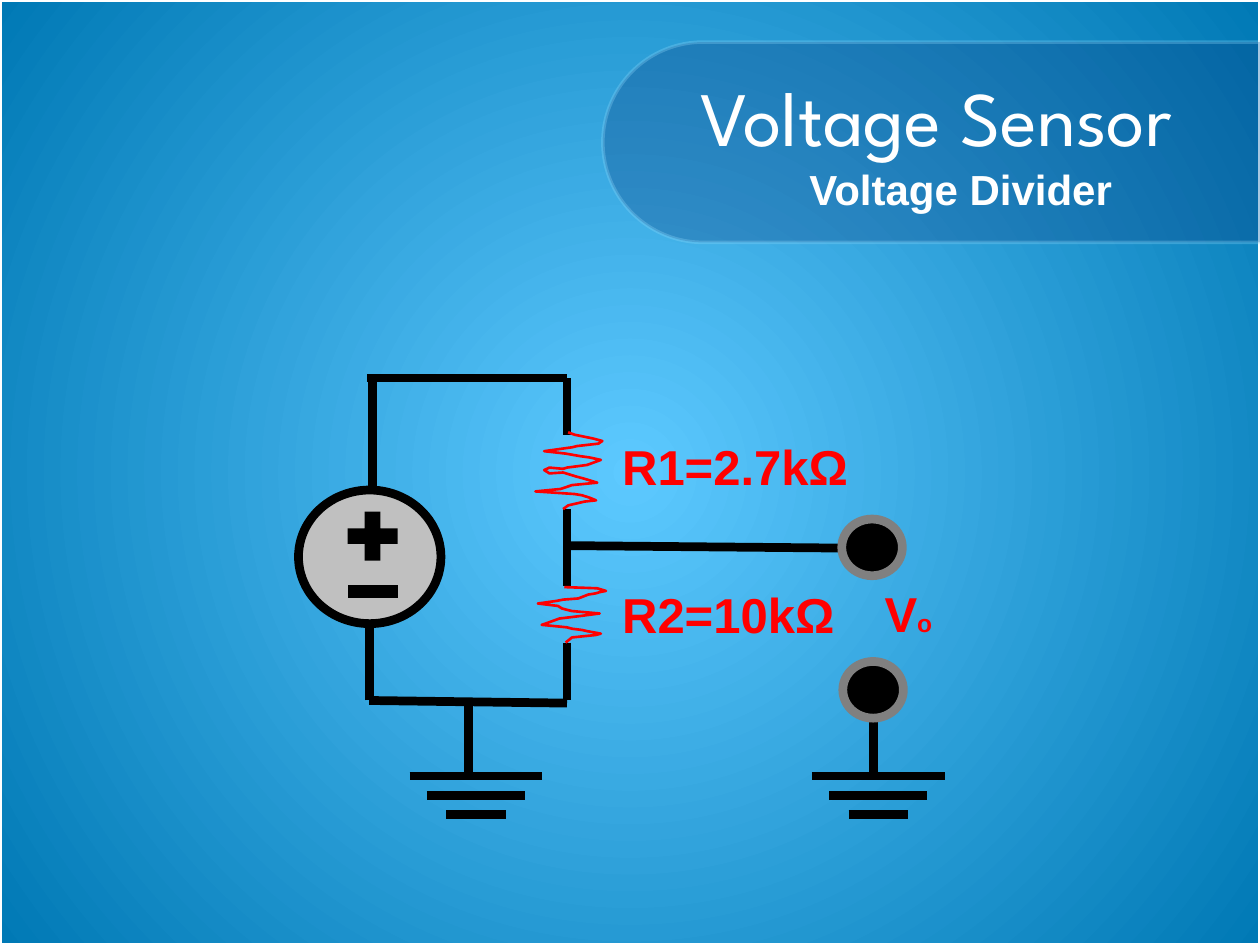
from lxml.etree import SubElement
from pptx import Presentation
from pptx.dml.color import RGBColor
from pptx.enum.shapes import MSO_CONNECTOR, MSO_SHAPE
from pptx.enum.text import MSO_ANCHOR, MSO_AUTO_SIZE, PP_ALIGN
from pptx.oxml.ns import qn
from pptx.util import Pt

# Resistor squiggles, relative to the top left of each one
R1_POINTS = [
    (18.7, 0), (22.3, 1.4), (33.1, 3.6), (38.2, 5), (36, 6.5), (23.8, 7.9),
    (20.9, 8.6), (5, 10.8), (17.3, 12.2), (25.9, 13.7), (31, 14.4),
    (37.4, 15.8), (29.5, 18.7), (18, 20.2), (15.8, 20.9), (8, 20.2),
    (5, 21.6), (8, 23.5), (15.8, 23), (23, 25.2), (28.1, 26.6), (35.3, 28.8),
    (20.9, 30.2), (14.4, 32.4), (0, 33.8), (22.3, 35.3), (26.6, 36),
    (31, 37.4), (34.6, 38.9), (28.1, 39.6), (18.7, 41.8), (15.8, 43.9)]
R2_POINTS = [
    (15.8, 0), (34.6, 0.7), (39.6, 2.2), (36, 2.9), (33.8, 3.6), (29.5, 4.3),
    (23.8, 6.5), (15.1, 7.2), (11.5, 7.9), (0.7, 9.4), (12.2, 10.8),
    (14.4, 12.2), (17.3, 13), (20.2, 13.7), (36, 15.1), (24.5, 16.6),
    (18.7, 17.3), (13, 18), (5, 20.9), (2.9, 21.6), (17.3, 23), (20.2, 23.8),
    (25.9, 24.5), (28.8, 25.2), (36.7, 26.6), (33.8, 27.4), (20.2, 28.8),
    (16.6, 31.7)]


def rgb(color):
    return RGBColor.from_string(color)


def style(sp, fill=None, line=None, width=5):
    sp.shadow.inherit = False
    if fill:
        sp.fill.solid()
        sp.fill.fore_color.rgb = rgb(fill)
    else:
        sp.fill.background()
    if line:
        sp.line.color.rgb = rgb(line)
        sp.line.width = Pt(width)
    else:
        sp.line.fill.background()


def add_shape(shapes, kind, x, y, w, h, **fmt):
    sp = shapes.add_shape(kind, Pt(x), Pt(y), Pt(w), Pt(h))
    style(sp, **fmt)
    return sp


def add_wire(shapes, x1, y1, x2, y2):
    line = shapes.add_connector(MSO_CONNECTOR.STRAIGHT, Pt(x1), Pt(y1), Pt(x2), Pt(y2))
    line.line.color.rgb = rgb("000000")
    line.line.width = Pt(5)
    SubElement(line._element.spPr, qn("a:effectLst"))


def add_run(p, text, size, color, font="Arial", bold=True):
    r = p.add_run()
    r.text = text
    r.font.size = Pt(size)
    r.font.name = font
    r.font.bold = bold
    r.font.color.rgb = rgb(color)


def add_label(shapes, x, y, w, h, *runs, color="FF0000", align=PP_ALIGN.LEFT, wrap=True):
    tf = shapes.add_textbox(Pt(x), Pt(y), Pt(w), Pt(h)).text_frame
    tf.word_wrap = wrap
    p = tf.paragraphs[0]
    p.alignment = align
    for text, size in runs:
        add_run(p, text, size, color)


def add_background(s, w, h):
    # Radial gradient, light in the middle
    fill = s.background.fill
    fill.gradient()
    for stop, color in zip(fill.gradient_stops, ("5DC9FF", "0079B5")):
        stop.color.rgb = rgb(color)
    grad = s._element.find(".//" + qn("a:gradFill"))
    grad.remove(grad.find(qn("a:lin")))
    circle = SubElement(grad, qn("a:path"), {"path": "circle"})
    SubElement(circle, qn("a:fillToRect"), {side: "50000" for side in "ltrb"})
    # Thin white frame
    add_shape(s.shapes, MSO_SHAPE.RECTANGLE, 0, 0, w, h, line="FFFFFF", width=2)


def add_heading(s, x, y, w, h):
    # Translucent tab, drawn upright and turned on its side
    tab = add_shape(s.shapes, MSO_SHAPE.ROUND_2_SAME_RECTANGLE,
                    x + (w - h) / 2, y + (h - w) / 2, h, w,
                    fill="073779", line="8FD9FB", width=2)
    tab.adjustments[0] = 0.5
    tab.rotation = 270
    for color in tab._element.iter(qn("a:srgbClr")):
        SubElement(color, qn("a:alpha"), {"val": "30000"})

    # Title, brought in front of the tab
    title = s.shapes.title
    title._element.getparent().append(title._element)
    title.left, title.top = Pt(x + 6), Pt(y + 12)
    title.width, title.height = Pt(w - 6), Pt(60)
    tf = title.text_frame
    tf.auto_size = MSO_AUTO_SIZE.NONE
    tf.vertical_anchor = MSO_ANCHOR.MIDDLE
    p = tf.paragraphs[0]
    p.alignment = PP_ALIGN.CENTER
    add_run(p, "Voltage Sensor", 44, "FFFFFF", font="League Spartan", bold=False)

    add_label(s.shapes, x + 33.5, y + 66, w - 33.5, 36.7, ("Voltage Divider", 24),
              color="FFFFFF", align=PP_ALIGN.CENTER)


def add_ground(shapes, x, y, stem_x, stem_top):
    add_wire(shapes, stem_x, stem_top, stem_x, y)
    for i, width in enumerate((76, 56, 34)):
        bar_y = y + 11 * i
        add_wire(shapes, x - width / 2, bar_y, x + width / 2, bar_y)


def add_resistor(shapes, x, y, points):
    (x0, y0), *rest = [(Pt(x + dx), Pt(y + dy)) for dx, dy in points]
    builder = shapes.build_freeform(x0, y0)
    builder.add_line_segments(rest, close=False)
    style(builder.convert_to_shape(), line="FF0000", width=1.5)


def add_circuit(s, x, y):
    shapes = s.shapes.add_group_shape().shapes

    # Voltage source
    add_shape(shapes, MSO_SHAPE.OVAL, x + 0.6, y + 65, 81.4, 76.4,
              fill="C0C0C0", line="000000")
    add_shape(shapes, MSO_SHAPE.MATH_PLUS, x + 23.5, y + 72.3, 38.9, 38.2, fill="000000")
    add_shape(shapes, MSO_SHAPE.MATH_MINUS, x + 23.5, y + 107, 38.9, 32.4, fill="000000")

    # Loop, then the tap to the output
    wires = [(40, 1, 154, 1), (43, 65, 43, 0), (154, 1, 154, 33.5),
             (154, 76, 154, 120), (41, 185.3, 154, 186.8), (41, 185.3, 41, 141.4),
             (154, 152.2, 154, 185.3), (154, 96.8, 313, 98.2)]
    for x1, y1, x2, y2 in wires:
        add_wire(shapes, x + x1, y + y1, x + x2, y + y2)

    # Grounds and output terminals
    for mid, stem_x, stem_top in ((102, 97.8, 185.3), (332, 329.3, 196)):
        add_ground(shapes, x + mid, y + 228.5, x + stem_x, y + stem_top)
    for dx, dy in ((311, 81.6), (311.6, 163)):
        add_shape(shapes, MSO_SHAPE.OVAL, x + dx, y + dy, 34.6, 32.4,
                  fill="000000", line="808080")

    # Resistors and labels
    add_resistor(shapes, x + 136, y + 32, R1_POINTS)
    add_resistor(shapes, x + 136.7, y + 120.5, R2_POINTS)
    add_label(shapes, x + 178.5, y + 31.2, 165.6, 41, ("R1=2.7kΩ", 28))
    add_label(shapes, x + 178.5, y + 115.5, 165.6, 41, ("R2=10kΩ", 28))
    add_label(shapes, x + 328.2, y + 114.8, 41.8, 41, ("V", 28), ("o", 14),
              align=PP_ALIGN.CENTER, wrap=False)


def main():
    prs = Presentation()
    prs.slide_width, prs.slide_height = Pt(720), Pt(540)
    s = prs.slides.add_slide(prs.slide_layouts[5])
    add_background(s, 720, 540)
    add_heading(s, 344.5, 24, 375.5, 114.5)
    add_circuit(s, 170, 215)
    prs.save("out.pptx")


if __name__ == "__main__":
    main()
